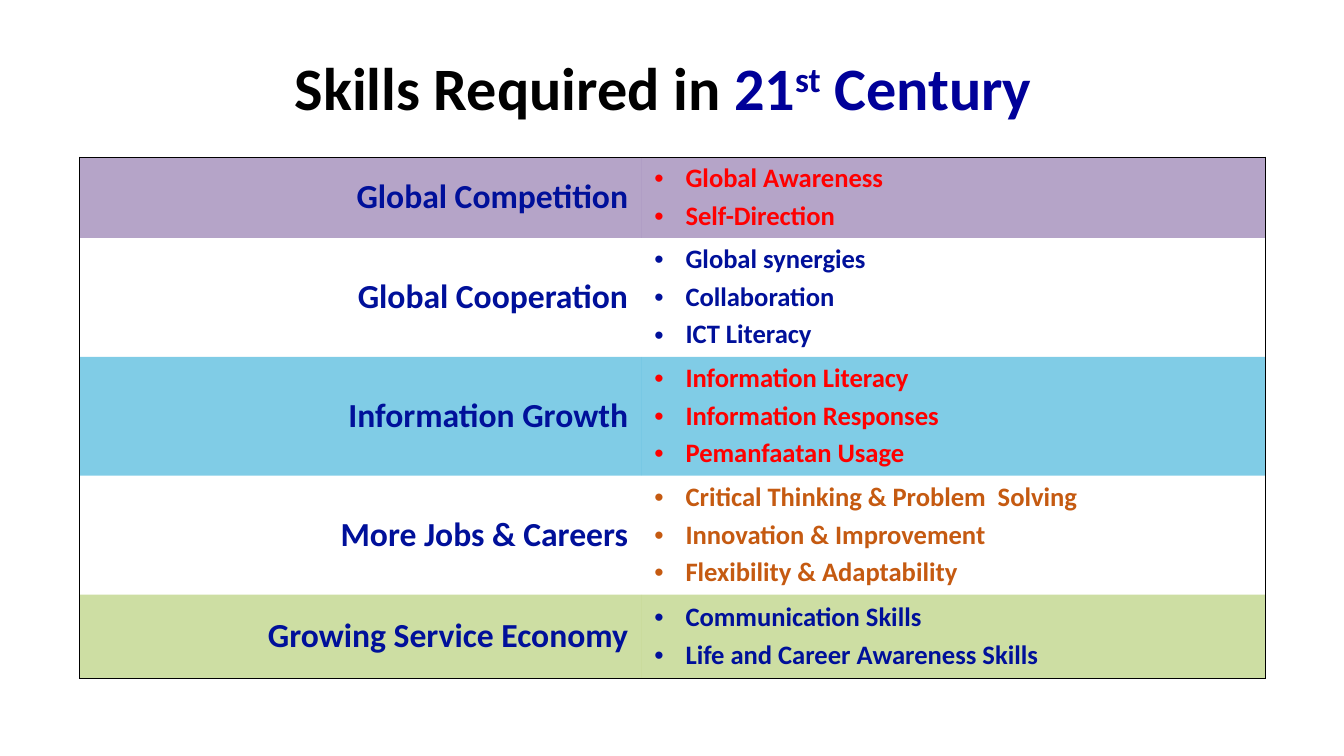
from lxml.etree import SubElement
from pptx import Presentation
from pptx.dml.color import RGBColor
from pptx.enum.text import MSO_ANCHOR, MSO_AUTO_SIZE, PP_ALIGN
from pptx.oxml.ns import qn
from pptx.util import Inches, Pt

FONT = "Calibri"
NAVY, RED, RUST, BLACK = "00109A", "FF0000", "C55A11", "000000"
TITLE = [("Skills Required in ", BLACK, 0), ("21", "000099", 0),
         ("st", "000099", 30000), (" Century ", "000099", 0)]
SKILLS = [
    ("Global Competition", "6C4B93", RED, 0.8,
     ["Global Awareness", "Self-Direction"]),
    ("Global Cooperation", None, NAVY, 1.18,
     ["Global synergies", "Collaboration", "ICT Literacy"]),
    ("Information Growth", "039ACF", RED, 1.18,
     ["Information Literacy", "Information Responses", "Pemanfaatan Usage"]),
    ("More Jobs & Careers", None, RUST, 1.18,
     ["Critical Thinking & Problem  Solving", "Innovation & Improvement",
      "Flexibility & Adaptability"]),
    ("Growing Service Economy", "9DBE49", NAVY, 0.83,
     ["Communication Skills", "Life and Career Awareness Skills"]),
]
COLS = (5.57, 6.19)
HEIGHTS = [row[3] for row in SKILLS]
INDENT = Inches(0.31)


def color(value):
    return RGBColor.from_string(value)


def add_run(p, text, size, value):
    r = p.add_run()
    r.text = text
    r.font.name, r.font.size, r.font.bold = FONT, Pt(size), True
    r.font.color.rgb = color(value)
    return r


def set_margins(box, x, y):
    box.margin_left = box.margin_right = Inches(x)
    box.margin_top = box.margin_bottom = Inches(y)


def fill_cell(cell, value):
    if value is None:
        cell.fill.background()
        return
    cell.fill.solid()
    cell.fill.fore_color.rgb = color(value)
    tint = cell._tc.tcPr.find(".//" + qn("a:srgbClr"))
    SubElement(tint, qn("a:alpha"), val="50000")


def set_borders(cell, edges):
    tcPr = cell._tc.tcPr
    for i, (side, shown) in enumerate(edges.items()):
        ln = SubElement(tcPr, qn("a:ln" + side), w=str(Pt(1) if shown else 0))
        if shown:
            fill = SubElement(ln, qn("a:solidFill"))
            SubElement(fill, qn("a:srgbClr"), val=BLACK)
        else:
            SubElement(ln, qn("a:noFill"))
        tcPr.insert(i, ln)


def write_cell(cell, lines, size, value, bulleted):
    cell.vertical_anchor = MSO_ANCHOR.MIDDLE
    set_margins(cell, 0.13, 0.05)
    tf = cell.text_frame
    for i, line in enumerate(lines):
        p = tf.add_paragraph() if i else tf.paragraphs[0]
        p.alignment = PP_ALIGN.LEFT if bulleted else PP_ALIGN.RIGHT
        pPr = p._p.get_or_add_pPr()
        SubElement(SubElement(pPr, qn("a:spcBef")), qn("a:spcPct"), val="20000")
        if bulleted:
            pPr.set("marL", str(INDENT))
            pPr.set("indent", str(-INDENT))
            SubElement(pPr, qn("a:buFont"), typeface="Arial")
            SubElement(pPr, qn("a:buChar"), char="•")
        add_run(p, line, size, value)


def add_title(s):
    sp = s.shapes.add_textbox(Inches(2.76), Inches(0.43), Inches(7.77), Inches(0.85))
    tf = sp.text_frame
    tf.word_wrap = False
    tf.auto_size = MSO_AUTO_SIZE.SHAPE_TO_FIT_TEXT
    set_margins(tf, 0.13, 0.07)
    p = tf.paragraphs[0]
    p.alignment = PP_ALIGN.CENTER
    for text, value, raised in TITLE:
        r = add_run(p, text, 43, value)
        if raised:
            r.font._element.set("baseline", str(raised))


def add_skills(s):
    frame = s.shapes.add_table(len(SKILLS), len(COLS), Inches(0.79), Inches(1.56),
                               Inches(sum(COLS)), Inches(sum(HEIGHTS)))
    table = frame.table
    table.first_row = table.horz_banding = False
    for col, width in zip(table.columns, COLS):
        col.width = Inches(width)
    last = len(SKILLS) - 1
    for i, (trend, tint, ink, height, skills) in enumerate(SKILLS):
        table.rows[i].height = Inches(height)
        write_cell(table.cell(i, 0), [trend], 24, NAVY, False)
        write_cell(table.cell(i, 1), skills, 19, ink, True)
        for j in range(len(COLS)):
            cell = table.cell(i, j)
            fill_cell(cell, tint)
            set_borders(cell, {"L": j == 0, "R": j == 1, "T": i == 0, "B": i == last})


def main():
    """Build the slide of skills required in the 21st century."""
    prs = Presentation()
    prs.slide_width, prs.slide_height = Inches(13.33), Inches(7.5)
    s = prs.slides.add_slide(prs.slide_layouts[6])
    add_skills(s)
    add_title(s)
    prs.save("out.pptx")


if __name__ == "__main__":
    main()
